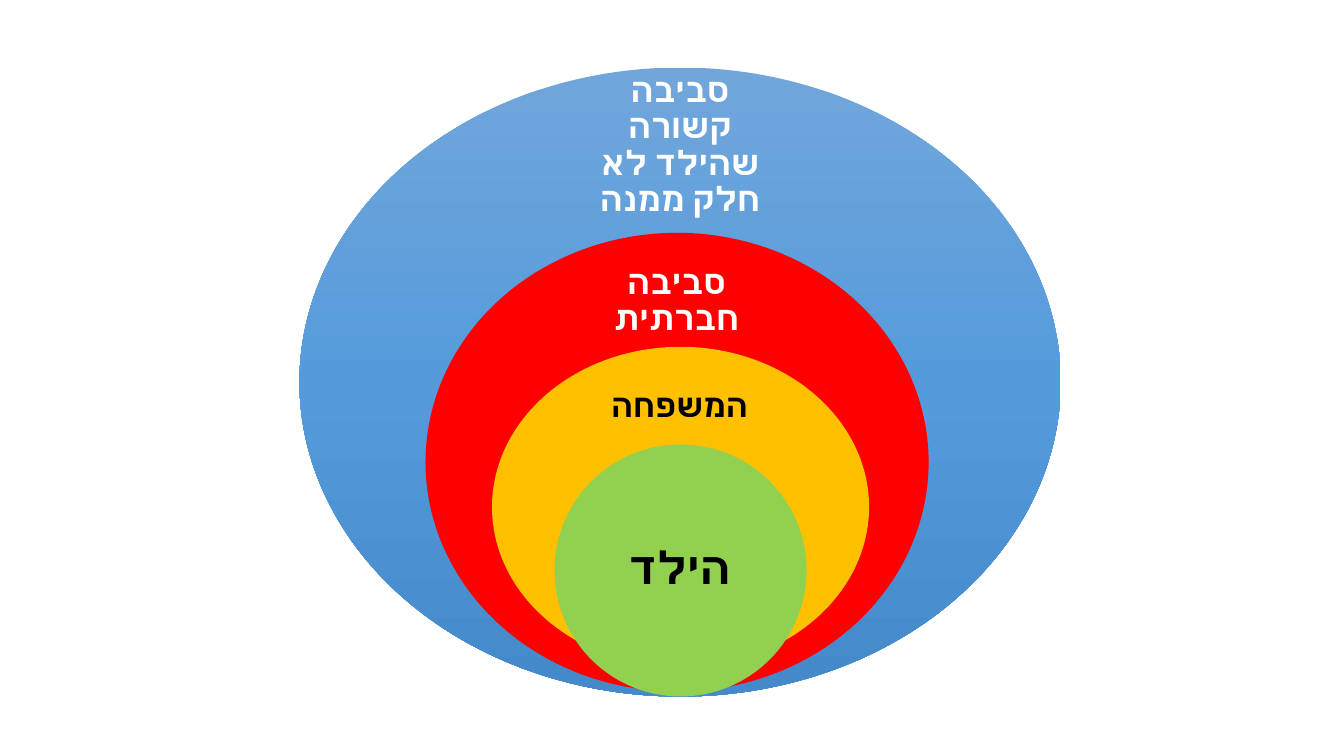
from copy import deepcopy

from pptx import Presentation
from pptx.dml.color import RGBColor
from pptx.enum.shapes import MSO_SHAPE
from pptx.enum.text import MSO_ANCHOR, PP_ALIGN
from pptx.oxml.ns import qn
from pptx.util import Emu, Pt
from lxml.etree import SubElement

PX = 9144  # 100 px to the inch
FONT = "Calibri"
COLORS = {
    "sky_top": "71A6DB", "sky_mid": "559BDB", "sky_low": "448ACA",
    "red": "FF0000", "amber": "FFC000", "green": "92D050",
    "white": "FFFFFF", "black": "000000",
}
SKY = ["sky_top", "sky_mid", "sky_low"]

# ellipse box, fills, label, label box, inset, size, text colour; outermost first
LAYERS = [
    ((297, 67, 755, 624), SKY, "סביבה קשורה שהילד לא חלק ממנה",
     (569, 98, 211, 94), 19, 24, "white"),
    ((422, 231, 499, 455), ["red"], "סביבה חברתית",
     (584, 258, 174, 82), 19, 24, "white"),
    ((488, 344, 374, 318), ["amber"], "המשפחה",
     (587, 368, 174, 71), 18, 23, "black"),
    ((550, 441, 250, 250), ["green"], "הילד",
     (586, 503, 176, 125), 25, 32, "black"),
]


def px(n):
    return Emu(n * PX)


def rgb(name):
    return RGBColor.from_string(COLORS[name])


def fill_gradient(fill, names):
    """Fill from top to bottom with evenly spaced stops."""
    fill.gradient()
    fill.gradient_angle = 270
    first = fill.gradient_stops[0]._gs
    for _ in names[2:]:
        first.addnext(deepcopy(first))
    for i, (stop, name) in enumerate(zip(fill.gradient_stops, names)):
        stop.position = i / (len(names) - 1)
        stop.color.rgb = rgb(name)


def add_ellipse(s, box, fills):
    sp = s.shapes.add_shape(MSO_SHAPE.OVAL, *map(px, box))
    sp.shadow.inherit = False
    sp.line.fill.background()
    if len(fills) > 1:
        fill_gradient(sp.fill, fills)
    else:
        sp.fill.solid()
        sp.fill.fore_color.rgb = rgb(fills[0])


def add_label(s, text, box, inset, size, color):
    tf = s.shapes.add_textbox(*map(px, box)).text_frame
    tf.word_wrap = True
    tf.vertical_anchor = MSO_ANCHOR.MIDDLE
    tf.margin_left = tf.margin_right = px(inset)
    tf.margin_top = tf.margin_bottom = px(inset)
    p = tf.paragraphs[0]
    p.alignment = PP_ALIGN.CENTER
    p.line_spacing = 0.9
    p._p.get_or_add_pPr().set("rtl", "1")
    r = p.add_run()
    r.text = text
    r.font.name = FONT
    r.font.size = Pt(size)
    r.font.bold = True
    r.font.color.rgb = rgb(color)
    SubElement(r._r.get_or_add_rPr(), qn("a:cs")).set("typeface", FONT)


def main():
    prs = Presentation()
    prs.slide_width, prs.slide_height = px(1333), px(750)
    s = prs.slides.add_slide(prs.slide_layouts[6])
    for box, fills, text, text_box, inset, size, color in LAYERS:
        add_ellipse(s, box, fills)
        add_label(s, text, text_box, inset, size, color)
    prs.save("out.pptx")


if __name__ == "__main__":
    main()
